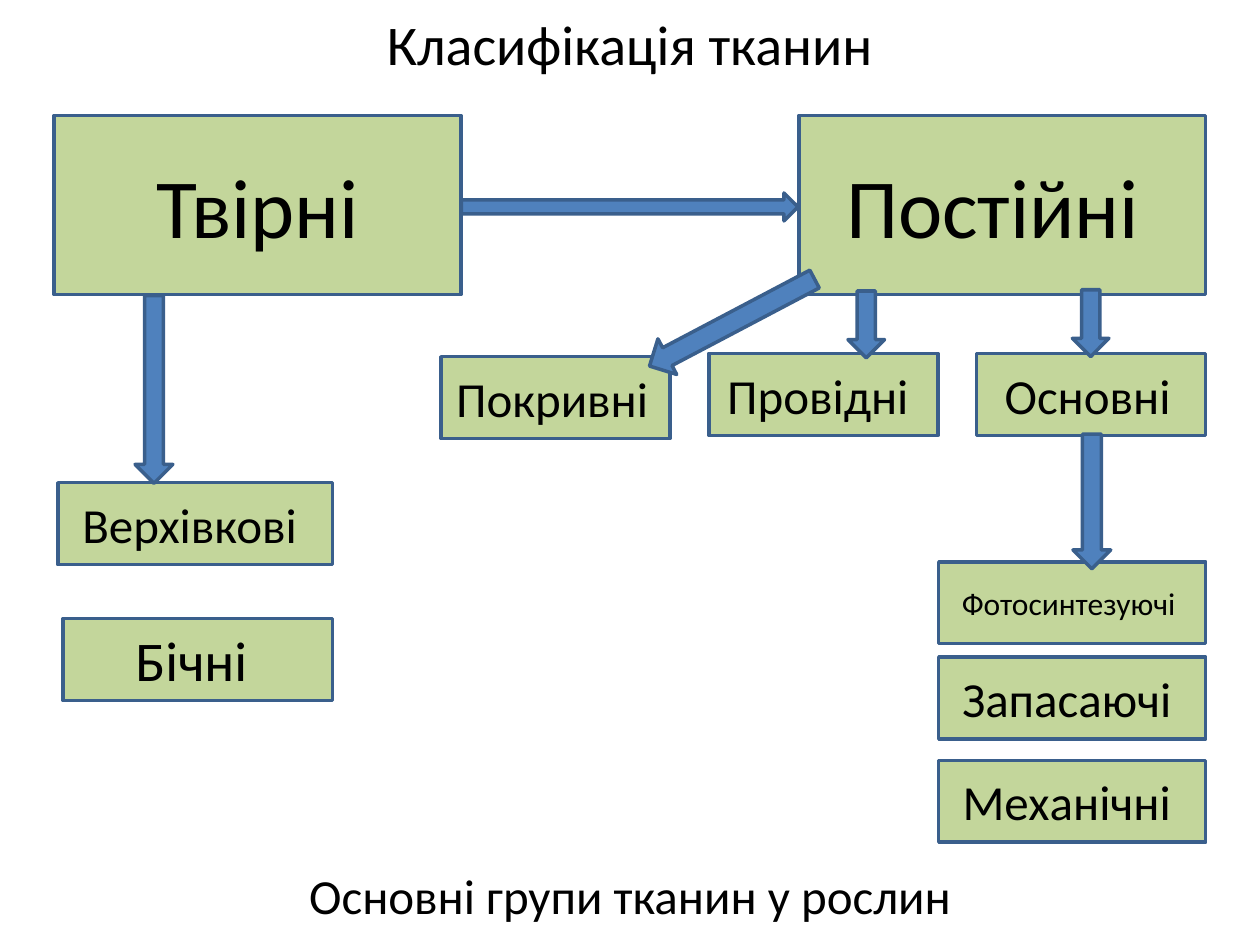
import pptx
import pptx.util
import pptx.dml.color
import pptx.enum.shapes
import pptx.enum.text

Pt = pptx.util.Pt
ANCHOR = pptx.enum.text.MSO_ANCHOR
SHAPE = pptx.enum.shapes.MSO_SHAPE

TEXT, GREEN, BLUE, OUTLINE = "000000", "C3D69B", "4F81BD", "3A5F8C"
RIGHT_EDGE = 689
SMALL_HEIGHT = 46.8

captions = [
    ("Класифікація тканин", 32, 0, ANCHOR.MIDDLE),
    ("Основні групи тканин у рослин", 28, 491, ANCHOR.TOP),
]

main_groups = [
    ([("Твірні", 48)], 31),
    ([("Постійні ", 48)], 456.5),
]
meristems = [
    ([("Верхівкові ", 28)], 33, 275.8),
    ([("Бічні ", 32)], 36, 353.5),
]
permanent = [
    ([("Покривні", 28), (" ", 18)], 252, 203.8),
    ([("Провідні ", 28)], 405, 202),
    ([("Основні", 28), (" ", 18)], 558, 202),
]
ground = [
    ([("Фотосинтезуючі ", 18)], 321),
    ([("Запасаючі ", 28)], 375.5),
    ([("Механічні ", 28)], 434.5),
]

arrows = [
    (88, 222.5, 107.3, 21.6, 90),
    (359.8, 118.3, 192.4, 16, 0),
    (623.2, 184.7, 38.2, 20.9, 90),
    (495, 185.4, 38.2, 20.9, 90),
    (418.3, 184.3, 106.6, 23, 152.2),
    (623.9, 286.6, 77, 21.6, 90),
]


def colour(value):
    return pptx.dml.color.RGBColor.from_string(value)


def write(frame, runs, anchor):
    frame.word_wrap = True
    frame.vertical_anchor = anchor
    paragraph = frame.paragraphs[0]
    paragraph.alignment = pptx.enum.text.PP_ALIGN.CENTER
    for words, size in runs:
        run = paragraph.add_run()
        run.text = words
        run.font.size = Pt(size)
        run.font.name = "Calibri"
        run.font.color.rgb = colour(TEXT)


def draw(kind, left, top, width, height, fill):
    shape = slide.shapes.add_shape(kind, Pt(left), Pt(top), Pt(width), Pt(height))
    shape.shadow.inherit = False
    shape.fill.solid()
    shape.fill.fore_color.rgb = colour(fill)
    shape.line.color.rgb = colour(OUTLINE)
    shape.line.width = Pt(2)
    return shape


def add_group(runs, left, top, width, height=SMALL_HEIGHT):
    group = draw(SHAPE.RECTANGLE, left, top, width, height, GREEN)
    write(group.text_frame, runs, ANCHOR.MIDDLE)


deck = pptx.Presentation()
deck.slide_width, deck.slide_height = Pt(720), Pt(540)
slide = deck.slides.add_slide(deck.slide_layouts[6])

for words, size, top, anchor in captions:
    caption = slide.shapes.add_textbox(Pt(36), Pt(top), Pt(648), Pt(49))
    write(caption.text_frame, [(words, size)], anchor)

for runs, left in main_groups:
    add_group(runs, left, 66, 232.5, 102.3)
for runs, left, top in meristems:
    add_group(runs, left, top, 190 - left)
for runs, left, top in permanent:
    add_group(runs, left, top, 131)
for runs, top in ground:
    add_group(runs, 536.4, top, RIGHT_EDGE - 536.4)

for center_x, center_y, length, thickness, angle in arrows:
    arrow = draw(SHAPE.RIGHT_ARROW, center_x - length / 2, center_y - thickness / 2,
                 length, thickness, BLUE) if angle != 0 else draw(
        SHAPE.RIGHT_ARROW, center_x - length / 2, center_y - thickness / 2,
        length, thickness, BLUE)
    arrow.rotation = angle

deck.save("out.pptx")
